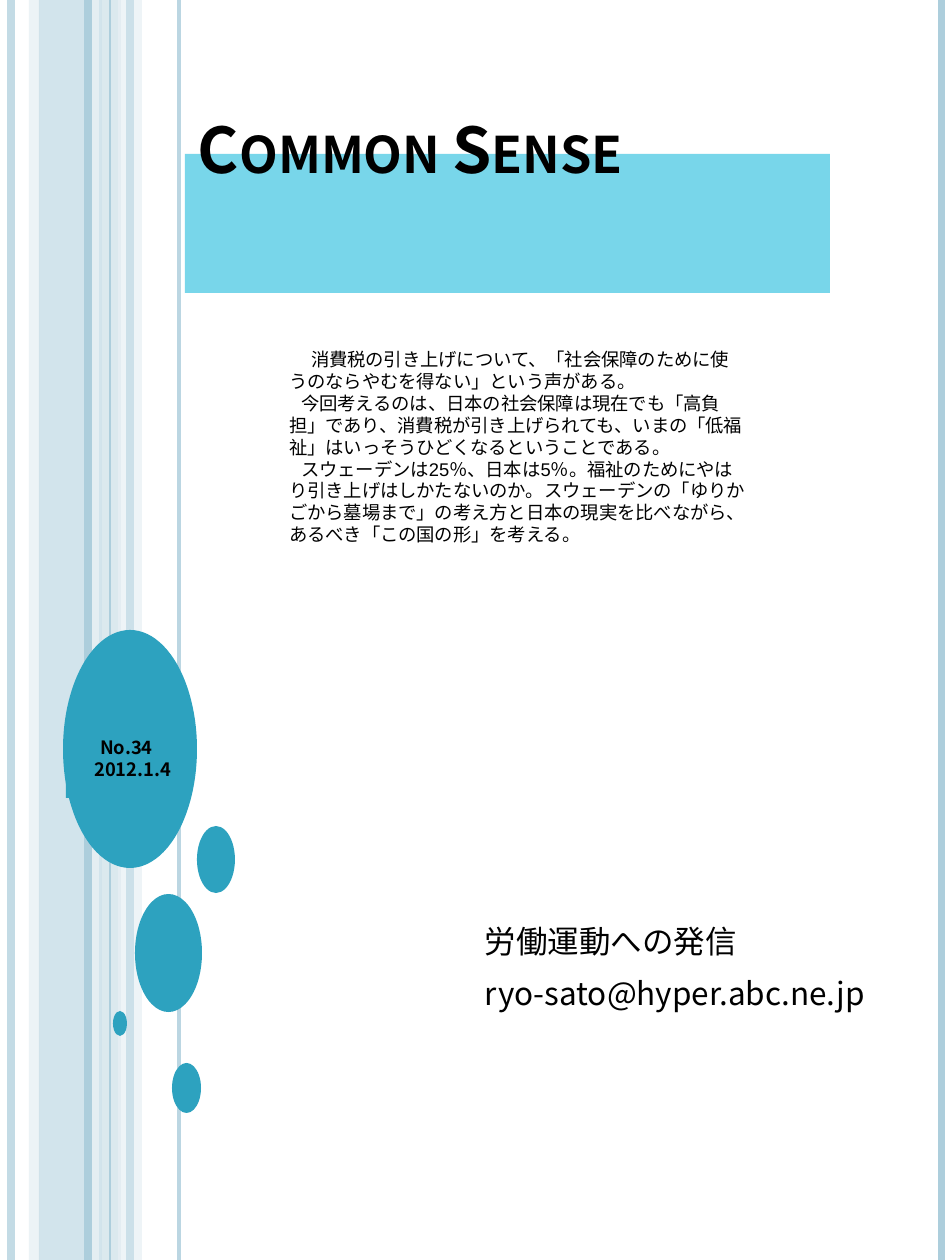
"""Build the Common Sense newsletter cover slide."""
import dataclasses
import typing

import pptx
import pptx.dml.color
import pptx.enum.shapes
import pptx.enum.text
import pptx.oxml.ns
import pptx.util
from lxml import etree

EMU_PER_PX = 914400 / 126
WIDTH, HEIGHT = 945, 1260
SHAPE = pptx.enum.shapes.MSO_SHAPE
ALIGN = pptx.enum.text.PP_ALIGN
ANCHOR = pptx.enum.text.MSO_ANCHOR


@dataclasses.dataclass(frozen=True)
class Theme:
    band: str = "ADCEDC"
    band_light: str = "CDE0E8"
    band_pale: str = "E8F0F4"
    bubble: str = "2DA2BF"
    banner: str = "78D6EA"
    text: str = "000000"
    heading_font: str = "Noto Sans CJK JP"
    body_font: str = "Arial"
    title_size: float = 36
    contact_size: float = 18
    body_size: float = 10.5


class Box(typing.NamedTuple):
    x: int
    y: int
    w: int
    h: int


class Band(typing.NamedTuple):
    x: int
    w: int
    color: str
    alpha: int


class Stripe(typing.NamedTuple):
    x: int
    weight: float
    color: str
    alpha: int


class Line(typing.NamedTuple):
    text: str
    indent: int = 0


T = Theme()
BANDS = [
    Band(39, 63, T.band, 54),
    Band(29, 11, T.band_light, 36),
    Band(102, 19, T.band_light, 70),
    Band(118, 24, T.band_pale, 71),
]
STRIPES = [
    Stripe(11, 4.5, T.band, 73),
    Stripe(95, 4.5, T.band_pale, 83),
    Stripe(88, 4.5, T.band, 100),
    Stripe(179, 2.25, T.band, 82),
    Stripe(110, 0.75, T.band, 100),
    Stripe(942, 4.5, T.band, 100),
]
FRONT_BAND = Band(126, 8, T.band, 51)
BUBBLES = [
    Box(63, 630, 134, 238),
    Box(135, 894, 67, 118),
    Box(113, 1011, 14, 25),
    Box(172, 1063, 29, 50),
    Box(197, 826, 38, 67),
]
BODY = [
    Line("消費税の引き上げについて、「社会保障のために使うのならやむを得ない」という声がある。", 22),
    Line("今回考えるのは、日本の社会保障は現在でも「高負担」であり、消費税が引き上げられても、"
         "いまの「低福祉」はいっそうひどくなるということである。", 12),
    Line("スウェーデンは25％、日本は5％。福祉のためにやはり引き上げはしかたないのか。"
         "スウェーデンの「ゆりかごから墓場まで」の考え方と日本の現実を比べながら、"
         "あるべき「この国の形」を考える。", 12),
]


def px(n: int) -> int:
    """Turn pixels into EMU."""
    return round(n * EMU_PER_PX)


def set_alpha(sp, alpha: int) -> None:
    """Make the colour of a shape or line partly transparent."""
    if alpha < 100:
        clr = next(sp._element.spPr.iter(pptx.oxml.ns.qn("a:srgbClr")))
        etree.SubElement(clr, pptx.oxml.ns.qn("a:alpha")).set("val", str(alpha * 1000))


def add_shape(s, kind, box: Box, color: str | None = None, alpha: int = 100):
    """Draw a borderless preset shape."""
    sp = s.shapes.add_shape(kind, *map(px, box))
    sp.shadow.inherit = False
    sp.line.fill.background()
    if color is None:
        sp.fill.background()
    else:
        sp.fill.solid()
        sp.fill.fore_color.rgb = pptx.dml.color.RGBColor.from_string(color)
        set_alpha(sp, alpha)
    return sp


def add_band(s, band: Band) -> None:
    """Draw a full-height band."""
    add_shape(s, SHAPE.RECTANGLE, Box(band.x, 0, band.w, HEIGHT), band.color, band.alpha)


def add_stripe(s, stripe: Stripe) -> None:
    """Draw a full-height vertical line."""
    x = px(stripe.x)
    sp = s.shapes.add_connector(pptx.enum.shapes.MSO_CONNECTOR.STRAIGHT, x, 0, x, px(HEIGHT))
    sp.line.width = pptx.util.Pt(stripe.weight)
    sp.line.color.rgb = pptx.dml.color.RGBColor.from_string(stripe.color)
    set_alpha(sp, stripe.alpha)
    etree.SubElement(sp._element.spPr, pptx.oxml.ns.qn("a:effectLst"))


def write(sp, lines: list[Line], *, size: float, font: str = T.heading_font,
          bold: bool = False, small_caps: bool = False, align=ALIGN.LEFT,
          anchor=ANCHOR.MIDDLE, leading: float | None = None, bottom: int = 0) -> None:
    """Fill a shape with formatted paragraphs."""
    tf = sp.text_frame
    tf.word_wrap = True
    tf.vertical_anchor = anchor
    tf.margin_left = tf.margin_right = px(13)
    tf.margin_top, tf.margin_bottom = 0, px(bottom)
    for i, line in enumerate(lines):
        p = tf.paragraphs[0] if i == 0 else tf.add_paragraph()
        p.alignment = align
        if leading:
            p.line_spacing = pptx.util.Pt(leading)
        if line.indent:
            p._p.get_or_add_pPr().set("indent", str(px(line.indent)))
        r = p.add_run()
        r.text = line.text
        r.font.size, r.font.name, r.font.bold = pptx.util.Pt(size), font, bold
        r.font.color.rgb = pptx.dml.color.RGBColor.from_string(T.text)
        rPr = r._r.get_or_add_rPr()
        etree.SubElement(rPr, pptx.oxml.ns.qn("a:ea")).set("typeface", T.heading_font)
        if small_caps:
            rPr.set("cap", "small")


def main() -> None:
    """Build and save the slide."""
    prs = pptx.Presentation()
    prs.slide_width, prs.slide_height = px(WIDTH), px(HEIGHT)
    s = prs.slides.add_slide(prs.slide_layouts[6])
    for band in BANDS:
        add_band(s, band)
    for stripe in STRIPES:
        add_stripe(s, stripe)
    add_band(s, FRONT_BAND)
    for box in BUBBLES:
        add_shape(s, SHAPE.OVAL, box, T.bubble)

    banner = add_shape(s, SHAPE.RECTANGLE, Box(185, 154, 645, 139), T.banner)
    write(banner, [Line("Common Sense")], size=T.title_size, bold=True, small_caps=True,
          anchor=ANCHOR.BOTTOM, bottom=107)
    contact = s.shapes.add_textbox(*map(px, Box(472, 907, 456, 120)))
    write(contact, [Line("労働運動への発信"), Line("ryo-sato@hyper.abc.ne.jp")],
          size=T.contact_size, anchor=ANCHOR.TOP, leading=30)
    issue = add_shape(s, SHAPE.RECTANGLE, Box(66, 719, 118, 79), T.bubble)
    write(issue, [Line("No.34　"), Line("2012.1.4")], size=T.body_size, bold=True,
          align=ALIGN.RIGHT, leading=12.5)
    summary = add_shape(s, SHAPE.ROUNDED_RECTANGLE, Box(265, 333, 506, 228))
    write(summary, BODY, size=T.body_size, font=T.body_font, leading=12.5)
    prs.save("out.pptx")


if __name__ == "__main__":
    main()
